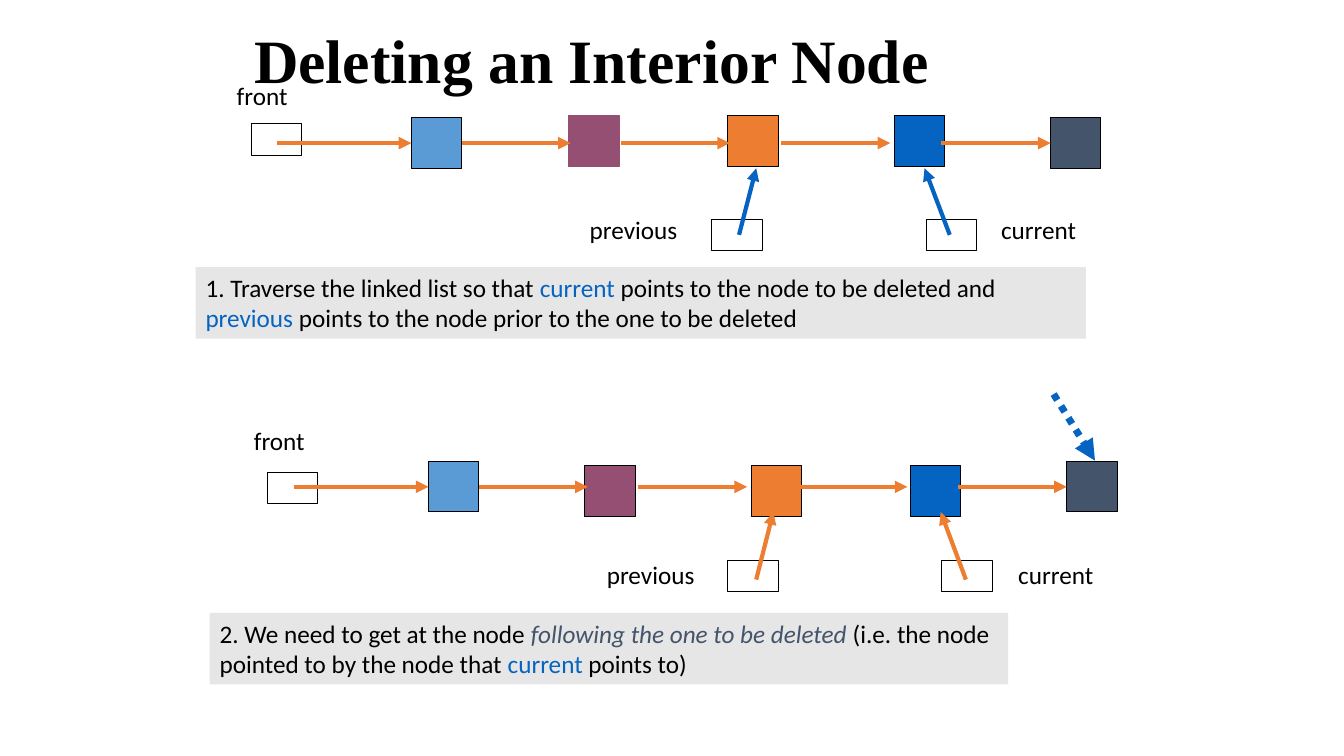
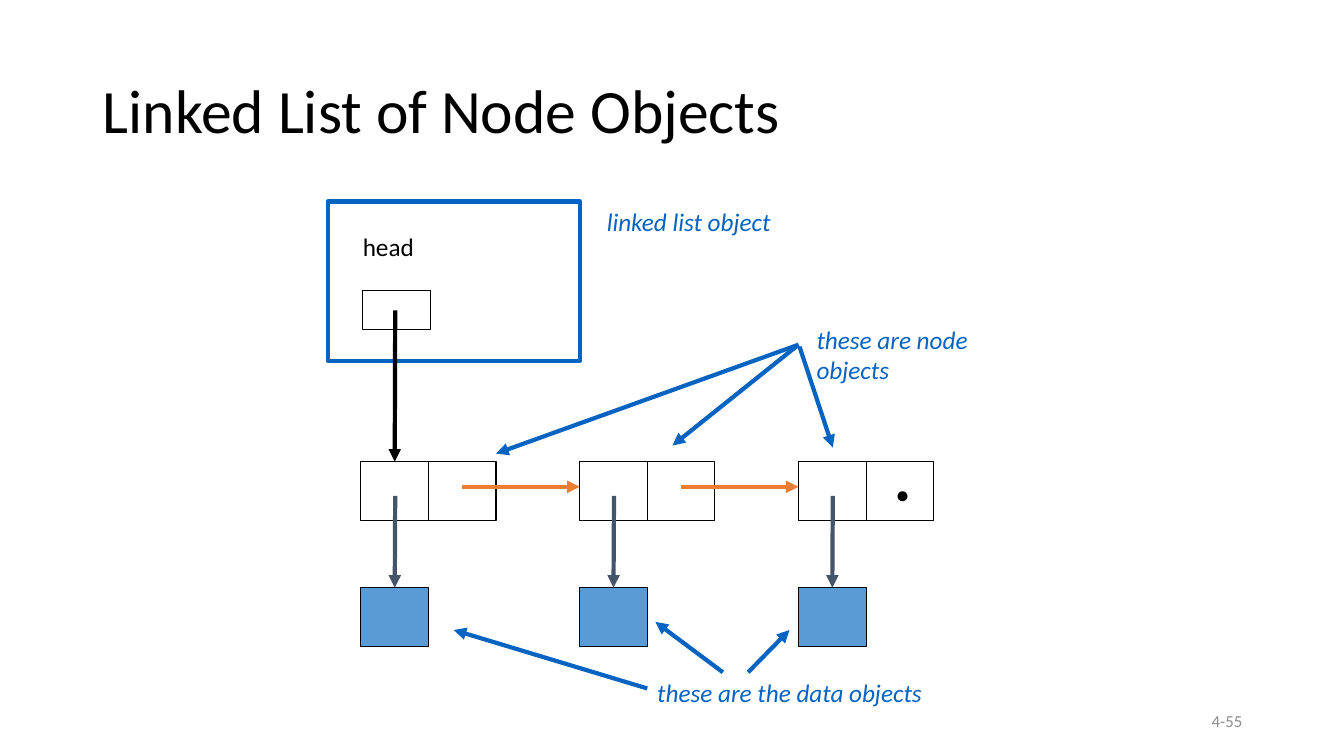
import pptx
import pptx.dml.color
import pptx.enum.dml
import pptx.enum.shapes
import pptx.enum.text
import pptx.oxml.ns
import pptx.util
from lxml import etree

PX = 9144
COLORS = {
    "black": "000000",
    "blue": "0563C1",
    "light": "5B9BD5",
    "purple": "954F72",
    "orange": "ED7D31",
    "slate": "44546A",
    "gray": "E7E6E6",
    "footer": "8C8C8C",
}
RGB = {name: pptx.dml.color.RGBColor.from_string(value) for name, value in COLORS.items()}
ALIGN = pptx.enum.text.PP_ALIGN
MIDDLE = pptx.enum.text.MSO_ANCHOR.MIDDLE
LABEL = {"name": "Calibri", "size": pptx.util.Pt(18), "italic": False}
NOTE = LABEL | {"italic": True}
TITLE = {"size": pptx.util.Pt(44)}


def add_box(slide, bounds, fill=None, line="black", weight=0.75):
    box = slide.shapes.add_shape(
        pptx.enum.shapes.MSO_SHAPE.RECTANGLE, *[value * PX for value in bounds]
    )
    box.shadow.inherit = False
    if fill:
        box.fill.solid()
        box.fill.fore_color.rgb = RGB[fill]
    else:
        box.fill.background()
    box.line.color.rgb = RGB[line]
    box.line.width = pptx.util.Pt(weight)
    return box


def add_arrow(slide, start, end, color, begin_box=None, end_box=None, weight=3):
    arrow = slide.shapes.add_connector(
        pptx.enum.shapes.MSO_CONNECTOR.STRAIGHT, *[value * PX for value in start + end]
    )
    arrow.line.color.rgb = RGB[color]
    arrow.line.width = pptx.util.Pt(weight)
    if begin_box:
        arrow.begin_connect(*begin_box)
    if end_box:
        arrow.end_connect(*end_box)
    line = arrow.line._get_or_add_ln()
    etree.SubElement(line, pptx.oxml.ns.qn("a:tailEnd"), type="triangle")
    etree.SubElement(arrow._element.spPr, pptx.oxml.ns.qn("a:effectLst"))
    return arrow


presentation = pptx.Presentation()
presentation.slide_width = 1333 * PX
presentation.slide_height = 750 * PX

titles = [
    ("Deleting an Interior Node", (242, 17, 850, 92), {"name": "Times New Roman", "bold": True}),
    ("Linked List of Node Objects", (92, 40, 1150, 145), {"name": "Calibri", "bold": False}),
]
slides = []
for text, bounds, title_format in titles:
    slide = presentation.slides.add_slide(presentation.slide_layouts[5])
    slides.append(slide)
    title = slide.shapes.title
    title.left, title.top, title.width, title.height = [value * PX for value in bounds]
    title.text_frame.text = text
    title.text_frame.vertical_anchor = MIDDLE
    title.text_frame.auto_size = pptx.enum.text.MSO_AUTO_SIZE.NONE
    paragraph = title.text_frame.paragraphs[0]
    paragraph.alignment = ALIGN.LEFT
    paragraph.line_spacing = 0.9
    font = paragraph.runs[0].font
    for name, value in (TITLE | title_format).items():
        setattr(font, name, value)
    font.color.rgb = RGB["black"]

delete_slide, list_slide = slides

node_colors = ["light", "purple", "orange", "blue", "slate"]
steps = [
    {
        "nodes": [(408, 117), (564, 115), (722, 115), (887, 115), (1042, 117)],
        "pointers": [(249, 123), (706, 218), (919, 218)],
        "purple_line": "purple",
        "link_y": 142,
        "front_x": 275,
        "link_x": 458,
        "up_arrows": [((733, 233), (750, 167)), ((942, 233), (917, 167))],
        "up_color": "blue",
    },
    {
        "nodes": [(425, 458), (580, 462), (745, 462), (903, 462), (1058, 458)],
        "pointers": [(265, 469), (722, 556), (934, 556)],
        "purple_line": "black",
        "link_y": 483,
        "front_x": 292,
        "link_x": 475,
        "up_arrows": [((750, 575), (767, 508)), ((958, 575), (933, 508))],
        "up_color": "orange",
    },
]
for step in steps:
    nodes = []
    for color, corner in zip(node_colors, step["nodes"]):
        line = step["purple_line"] if color == "purple" else "black"
        nodes.append(add_box(delete_slide, corner + (50, 50), color, line))
    for corner in step["pointers"]:
        add_box(delete_slide, corner + (50, 31))
    first, last = nodes[0], nodes[-1]
    y = step["link_y"]
    add_arrow(delete_slide, (step["front_x"], y), (step["link_x"] - 50, y), "orange",
              end_box=(first, 1))
    for index in range(4):
        x = step["link_x"] + round(index * 475 / 3)
        add_arrow(delete_slide, (x, y), (x + 108, y), "orange",
                  begin_box=(first, 3) if index == 0 else None,
                  end_box=(last, 1) if index == 3 else None)
    for start, end in step["up_arrows"]:
        add_arrow(delete_slide, start, end, step["up_color"])

dotted_arrow = add_arrow(delete_slide, (1045, 391), (1086, 457), "blue", weight=5)
dotted_arrow.line.dash_style = pptx.enum.dml.MSO_LINE.ROUND_DOT

add_box(list_slide, (325, 200, 250, 158), line="blue", weight=3)
add_box(list_slide, (360, 288, 67, 39))
cells, data_boxes = [], []
for index in range(3):
    x = 358 + index * 217
    cells.append(add_box(list_slide, (x, 458, 67, 58)))
    add_box(list_slide, (x + 67, 458, 67, 58))
    data_boxes.append(add_box(list_slide, (x, 583, 67, 58), "light"))
add_arrow(list_slide, (392, 308), (392, 458), "black", end_box=(cells[0], 0))
for index, data_box in enumerate(data_boxes):
    x = 392 + index * 217
    add_arrow(list_slide, (x, 492), (x, 583), "slate", end_box=(data_box, 0))
for x in (458, 675):
    add_arrow(list_slide, (x, 483), (x + 117, 483), "orange")
note_arrows = [
    ((792, 342), (492, 450)),
    ((792, 342), (667, 442)),
    ((793, 344), (826, 444)),
    ((742, 667), (783, 625)),
    ((717, 667), (650, 617)),
    ((642, 683), (450, 625)),
]
for start, end in note_arrows:
    add_arrow(list_slide, start, end, "blue")

step_one = [
    ("1. Traverse the linked list so that", "black", LABEL),
    (" current", "blue", LABEL),
    (" points to the node to be deleted and ", "black", LABEL),
    ("previous", "blue", LABEL),
    (" points to the node prior to the one to be deleted", "black", LABEL),
]
step_two = [
    ("2. We need to get at the node ", "black", LABEL),
    ("following the one to be deleted ", "slate", NOTE),
    ("(i.e. the node pointed to by the node that ", "black", LABEL),
    ("current ", "blue", LABEL),
    ("points to)", "black", LABEL),
]
dot = {"name": "Times New Roman", "size": pptx.util.Pt(60)}
number = LABEL | {"size": pptx.util.Pt(12)}
texts = [
    (delete_slide, (225, 75, 100, 40), [("front", "black", LABEL)]),
    (delete_slide, (575, 208, 142, 40), [("previous", "black", LABEL)]),
    (delete_slide, (983, 208, 142, 40), [("current", "black", LABEL)]),
    (delete_slide, (194, 265, 883, 71), step_one),
    (delete_slide, (242, 417, 100, 40), [("front", "black", LABEL)]),
    (delete_slide, (592, 550, 142, 40), [("previous", "black", LABEL)]),
    (delete_slide, (1000, 550, 142, 40), [("current", "black", LABEL)]),
    (delete_slide, (208, 608, 792, 71), step_two),
    (list_slide, (875, 408, 33, 110), [(".", "black", dot)]),
    (list_slide, (350, 225, 117, 40), [("head", "black", LABEL)]),
    (list_slide, (592, 200, 283, 40), [("linked list object", "blue", NOTE)]),
    (list_slide, (800, 317, 225, 71), [("these are node objects", "blue", NOTE)]),
    (list_slide, (642, 667, 408, 40), [("these are the data objects", "blue", NOTE)]),
    (list_slide, (942, 695, 300, 40), [("4-55", "footer", number)]),
]
for slide, bounds, runs in texts:
    text_box = slide.shapes.add_textbox(*[value * PX for value in bounds])
    text_box.text_frame.word_wrap = True
    paragraph = text_box.text_frame.paragraphs[0]
    if runs in (step_one, step_two):
        text_box.fill.solid()
        text_box.fill.fore_color.rgb = RGB["gray"]
    if runs[0][2] is number:
        text_box.text_frame.vertical_anchor = MIDDLE
        paragraph.alignment = ALIGN.RIGHT
    for text, color, run_format in runs:
        run = paragraph.add_run()
        run.text = text
        run.font.color.rgb = RGB[color]
        for name, value in run_format.items():
            setattr(run.font, name, value)

presentation.save("out.pptx")
